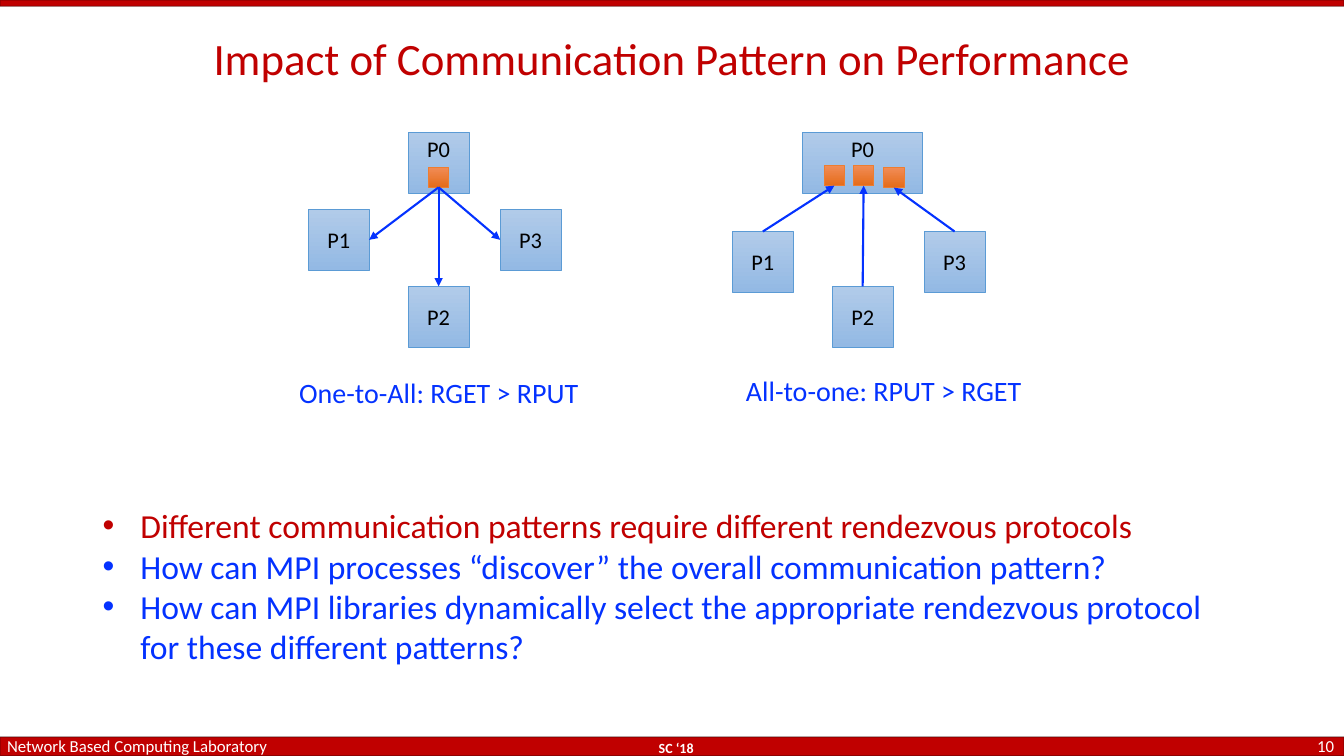
from pptx import Presentation
from pptx.dml.color import RGBColor as RGB
from pptx.enum.shapes import MSO_CONNECTOR as CONN, MSO_SHAPE as SHAPE
from pptx.enum.text import MSO_ANCHOR as ANCHOR, PP_ALIGN as ALIGN
from pptx.oxml.ns import qn
from pptx.util import Pt
from lxml.etree import SubElement

W, H = 960, 540
NODE, BLOCK = 43.4, 14.4
TOP, LEFT, BOTTOM, RIGHT = range(4)
COLORS = {
    "red": "C00000", "blue": "0432FF", "white": "FFFFFF", "black": "000000",
    "node_top": "B1CBE9", "node_end": "93B9E4", "node_line": "5B9BD5",
    "block_top": "F18C57", "block_end": "E56C19", "block_line": "ED7D31",
}


def rgb(name):
    return RGB.from_string(COLORS[name])


def write(tf, text, size=16, color="black", bold=False, align=ALIGN.LEFT,
          anchor=ANCHOR.TOP, inset=3.6, spacing=None):
    tf.word_wrap = True
    tf.vertical_anchor = anchor
    tf.margin_top = tf.margin_bottom = Pt(inset)
    p = tf.paragraphs[0]
    if p.runs:
        p = tf.add_paragraph()
    p.alignment = align
    p.line_spacing = spacing
    r = p.add_run()
    r.text = text
    r.font.name = "Calibri"
    r.font.size = Pt(size)
    r.font.bold = bold
    r.font.color.rgb = rgb(color)
    return p


def add_text(s, x, y, w, h, text, **fmt):
    tf = s.shapes.add_textbox(Pt(x), Pt(y), Pt(w), Pt(h)).text_frame
    write(tf, text, **fmt)
    return tf


def add_rect(s, x, y, w, h):
    sp = s.shapes.add_shape(SHAPE.RECTANGLE, Pt(x), Pt(y), Pt(w), Pt(h))
    sp.shadow.inherit = False
    return sp


def add_bar(s, y, h):
    sp = add_rect(s, 0, y, W, h)
    sp.fill.solid()
    sp.fill.fore_color.rgb = rgb("red")
    sp.line.color.rgb = rgb("black")
    sp.line.width = Pt(1)
    color = sp.line._ln.find(".//" + qn("a:srgbClr"))
    SubElement(color, qn("a:alpha"), val="25000")


def add_shaded(s, x, y, w, h, kind):
    sp = add_rect(s, x, y, w, h)
    sp.fill.gradient()
    sp.fill.gradient_angle = 270
    for stop, end, pos in zip(sp.fill.gradient_stops, ("top", "end"), (0, 1)):
        stop.color.rgb = rgb(f"{kind}_{end}")
        stop.position = pos
    sp.line.color.rgb = rgb(f"{kind}_line")
    sp.line.width = Pt(0.5)
    return sp


def add_node(s, x, y, text, w=NODE, anchor=ANCHOR.MIDDLE):
    sp = add_shaded(s, x, y, w, NODE, "node")
    write(sp.text_frame, text, align=ALIGN.CENTER, anchor=anchor, inset=2)
    return sp


def add_arrow(s, block, node, side, arrow_end):
    c = s.shapes.add_connector(CONN.STRAIGHT, 0, 0, 0, 0)
    c.begin_connect(block, BOTTOM)
    c.end_connect(node, side)
    c.line.color.rgb = rgb("blue")
    c.line.width = Pt(1.5)
    SubElement(c.line._ln, qn(f"a:{arrow_end}"), type="triangle")
    SubElement(c._element.spPr, qn("a:effectLst"))


def add_pattern(s, x, y, root_w, side_y, blocks, sides, arrow_end):
    mid = x + 93
    add_node(s, mid - root_w / 2, y, "P0", root_w, ANCHOR.TOP)
    nodes = [add_node(s, x, y + side_y, "P1"),
             add_node(s, mid - NODE / 2, y + 110.2, "P2"),
             add_node(s, x + 137, y + side_y, "P3")]
    shapes = [add_shaded(s, mid + dx - BLOCK / 2, y + dy, BLOCK, BLOCK, "block")
              for dx, dy in blocks]
    if len(shapes) == 1:
        shapes *= len(nodes)
    for block, node, side in zip(shapes, nodes, sides):
        add_arrow(s, block, node, side, arrow_end)


def add_title(s, x, y, w, h, text):
    sp = s.shapes.title
    sp.left, sp.top, sp.width, sp.height = Pt(x), Pt(y), Pt(w), Pt(h)
    write(sp.text_frame, text, size=32, color="red", align=ALIGN.CENTER,
          anchor=ANCHOR.MIDDLE, spacing=0.9)


def add_bullets(s, x, y, w, h, items):
    tf = s.shapes.add_textbox(Pt(x), Pt(y), Pt(w), Pt(h)).text_frame
    for text, color in items:
        pPr = write(tf, text, size=24, color=color)._p.get_or_add_pPr()
        pPr.set("marL", str(Pt(27)))
        pPr.set("indent", str(-Pt(27)))
        SubElement(pPr, qn("a:buFont"), typeface="Arial")
        SubElement(pPr, qn("a:buChar"), char="•")


def add_footer(s, y, h):
    add_bar(s, y, h)
    add_text(s, -2, y - 1.4, 274, 18.7, "Network Based Computing Laboratory",
             size=12, color="white", anchor=ANCHOR.BOTTOM)
    add_text(s, 382, y - 1.4, 202, 18.7, "SC ‘18", size=10, color="white",
             bold=True, align=ALIGN.CENTER, anchor=ANCHOR.BOTTOM)
    add_text(s, W - 63.5, y, 63.5, 13, "10", size=12, color="white",
             align=ALIGN.RIGHT, anchor=ANCHOR.MIDDLE)


def main():
    prs = Presentation()
    prs.slide_width, prs.slide_height = Pt(W), Pt(H)
    s = prs.slides.add_slide(prs.slide_layouts[5])
    add_bar(s, 0, 4.5)
    add_footer(s, 526.4, 13.6)
    add_title(s, 26.6, 13.6, 907, 60.5,
              "Impact of Communication Pattern on Performance")
    caption = dict(size=20, color="blue", align=ALIGN.CENTER)
    add_text(s, 143, 264.5, 341, 30, "One-to-All: RGET > RPUT", **caption)
    add_text(s, 504.5, 263.2, 253.5, 30, "All-to-one: RPUT > RGET", **caption)
    add_pattern(s, 220.3, 94.4, NODE, 55.2, [(0, 25)],
                (RIGHT, TOP, LEFT), "tailEnd")
    add_pattern(s, 523.2, 94.4, 86, 71, [(-20.2, 23.8), (0.7, 23.8), (22.3, 25.2)],
                (TOP, TOP, TOP), "headEnd")
    add_bullets(s, 66.2, 357.3, 828, 137.5, [
        ("Different communication patterns require different rendezvous protocols", "red"),
        ("How can MPI processes “discover” the overall communication pattern?", "blue"),
        ("How can MPI libraries dynamically select the appropriate rendezvous "
         "protocol for these different patterns?", "blue"),
    ])
    prs.save("out.pptx")


if __name__ == "__main__":
    main()
